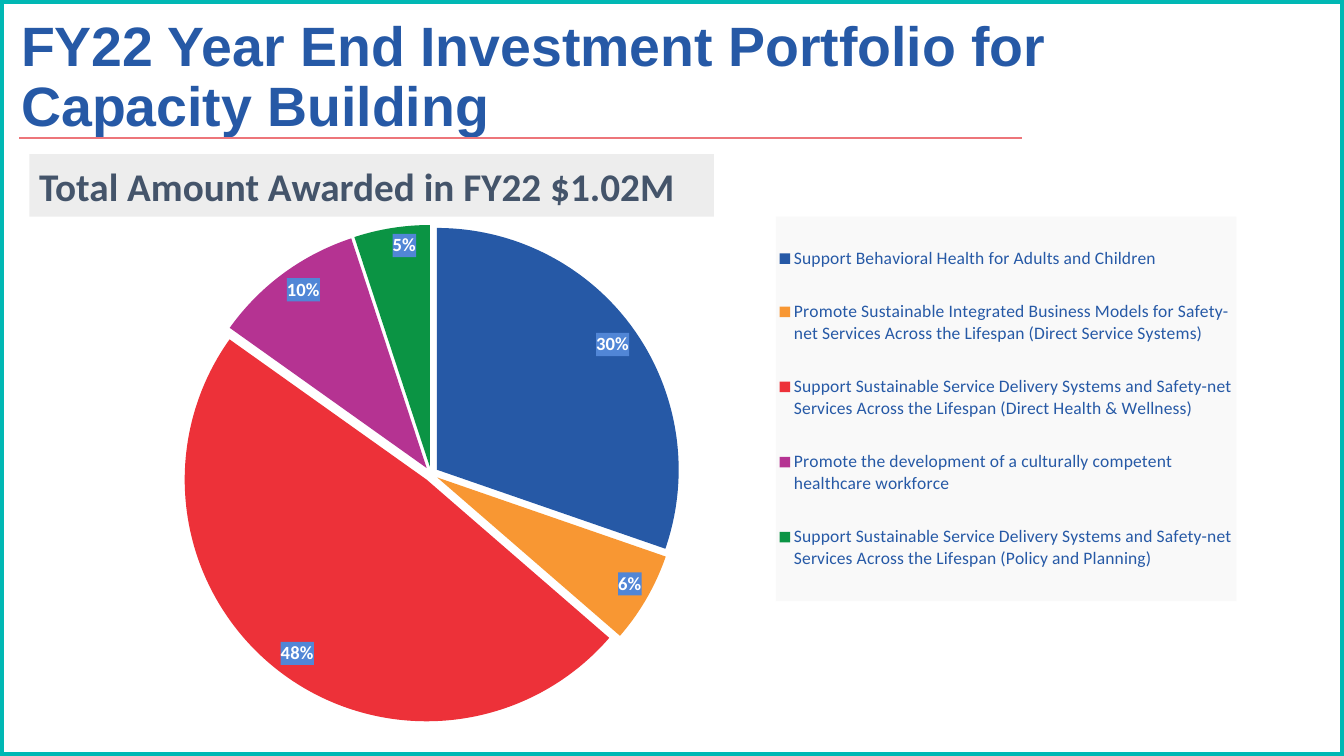
from lxml import etree
from pptx import Presentation
from pptx.chart.data import CategoryChartData
from pptx.dml.color import RGBColor
from pptx.enum.chart import XL_CHART_TYPE, XL_LABEL_POSITION, XL_LEGEND_POSITION
from pptx.enum.shapes import MSO_CONNECTOR, MSO_SHAPE
from pptx.enum.text import MSO_ANCHOR, MSO_AUTO_SIZE, PP_ALIGN
from pptx.oxml import parse_xml
from pptx.oxml.ns import nsdecls, qn
from pptx.util import Inches, Pt

COLORS = {
    "border": "00B8B4",
    "rule": "ED757A",
    "blue": "2659A6",
    "orange": "F89733",
    "red": "ED3139",
    "purple": "B53392",
    "green": "0B9444",
    "banner": "EDEDED",
    "slate": "44546A",
    "legend": "F9F9F9",
    "label": "5186D6",
    "white": "FFFFFF",
}

AWARDS = [
    ("Support Behavioral Health for Adults and Children", 30, "blue"),
    ("Promote Sustainable Integrated Business Models for Safety-net Services "
     "Across the Lifespan (Direct Service Systems)", 6, "orange"),
    ("Support Sustainable Service Delivery Systems and Safety-net Services "
     "Across the Lifespan (Direct Health & Wellness)", 48, "red"),
    ("Promote the development of a culturally competent healthcare workforce",
     10, "purple"),
    ("Support Sustainable Service Delivery Systems and Safety-net Services "
     "Across the Lifespan (Policy and Planning)", 5, "green"),
]


def color(name):
    """Return the named colour."""
    return RGBColor.from_string(COLORS[name])


def style_font(font, name, size, color_name, bold=False):
    """Set typeface, size, colour and weight."""
    font.name = name
    font.size = Pt(size)
    font.bold = bold
    font.color.rgb = color(color_name)


def set_title(page, text):
    """Place and format the title placeholder."""
    title = page.shapes.title
    title.left, title.top = Inches(0.11), Inches(0.35)
    title.width, title.height = Inches(11.5), Inches(0.86)
    frame = title.text_frame
    frame.text = text
    frame.word_wrap = True
    frame.auto_size = MSO_AUTO_SIZE.NONE
    frame.vertical_anchor = MSO_ANCHOR.MIDDLE
    para = frame.paragraphs[0]
    para.alignment = PP_ALIGN.LEFT
    para.line_spacing = 0.9
    style_font(para.runs[0].font, "Arial", 39.6, "blue", True)


def add_border(page, width, height):
    """Frame the whole slide."""
    border = page.shapes.add_shape(MSO_SHAPE.RECTANGLE, 0, 0, width, height)
    border.shadow.inherit = False
    border.fill.background()
    border.line.color.rgb = color("border")
    border.line.width = Pt(5.75)


def add_rule(page):
    """Draw the line under the title."""
    rule = page.shapes.add_connector(
        MSO_CONNECTOR.STRAIGHT, Inches(0.19), Inches(1.37), Inches(10.14), Inches(1.37))
    rule.line.color.rgb = color("rule")
    rule.line.width = Pt(1.5)
    etree.SubElement(rule._element.spPr, qn("a:effectLst"))


def add_banner(page, text):
    """Add the shaded total above the chart."""
    banner = page.shapes.add_shape(
        MSO_SHAPE.RECTANGLE, Inches(0.29), Inches(1.53), Inches(6.79), Inches(0.62))
    banner.shadow.inherit = False
    banner.fill.solid()
    banner.fill.fore_color.rgb = color("banner")
    banner.line.fill.background()
    frame = banner.text_frame
    frame.text = text
    frame.word_wrap = True
    frame.vertical_anchor = MSO_ANCHOR.MIDDLE
    para = frame.paragraphs[0]
    para.alignment = PP_ALIGN.LEFT
    style_font(para.runs[0].font, "Calibri", 28, "slate", True)


def chart_layout(left, top, width, height, inner=False):
    """Build a manual layout from fractions of the chart."""
    target = '<c:layoutTarget val="inner"/>' if inner else ""
    return parse_xml(
        f'<c:layout {nsdecls("c")}><c:manualLayout>{target}'
        '<c:xMode val="edge"/><c:yMode val="edge"/>'
        f'<c:x val="{left}"/><c:y val="{top}"/><c:w val="{width}"/><c:h val="{height}"/>'
        '</c:manualLayout></c:layout>')


def chart_fill(name):
    """Build a solid background for a chart part."""
    return parse_xml(
        f'<c:spPr {nsdecls("c", "a")}><a:solidFill>'
        f'<a:srgbClr val="{COLORS[name]}"/></a:solidFill></c:spPr>')


def remove_layout(element):
    """Drop an automatic layout."""
    for layout in element.findall(qn("c:layout")):
        element.remove(layout)


def format_legend(chart):
    """Place the legend at the right of the pie."""
    chart.has_legend = True
    legend = chart.legend
    legend.position = XL_LEGEND_POSITION.CORNER
    legend.include_in_layout = True
    style_font(legend.font, "Calibri", 12.5, "blue")
    element = legend._element
    remove_layout(element)
    overlay = element.find(qn("c:overlay"))
    overlay.addprevious(chart_layout(0.616, 0, 0.38, 0.745))
    overlay.addnext(chart_fill("legend"))


def format_labels(plot):
    """Show percentages inside the slices."""
    plot.has_data_labels = True
    labels = plot.data_labels
    labels.show_value = False
    labels.show_percentage = True
    labels.number_format = "0%"
    labels.number_format_is_linked = False
    labels.position = XL_LABEL_POSITION.INSIDE_END
    style_font(labels.font, "Calibri", 13.3, "white", True)
    labels._element.find(qn("c:txPr")).addprevious(chart_fill("label"))


def add_pie(page):
    """Add the pie of awards with its legend."""
    data = CategoryChartData()
    data.categories = [name for name, _, _ in AWARDS]
    data.add_series("Series 1", [share for _, share, _ in AWARDS])
    chart = page.shapes.add_chart(
        XL_CHART_TYPE.PIE, Inches(0.29), Inches(2.15), Inches(12.02), Inches(5.12), data).chart
    chart.has_title = False
    style_font(chart.font, "Calibri", 10, "blue")
    plot = chart.plots[0]
    plot.vary_by_categories = True
    series = plot.series[0]
    series._element.find(qn("c:tx")).addnext(
        parse_xml(f'<c:explosion {nsdecls("c")} val="3"/>'))
    for index, (_, _, name) in enumerate(AWARDS):
        fill = series.points[index].format.fill
        fill.solid()
        fill.fore_color.rgb = color(name)
    format_labels(plot)
    format_legend(chart)
    area = plot._element.getparent()
    remove_layout(area)
    area.insert(0, chart_layout(0.126, 0.011, 0.411, 0.975, inner=True))


def main():
    """Build and save the slide."""
    deck = Presentation()
    deck.slide_width, deck.slide_height = Inches(13.33), Inches(7.5)
    page = deck.slides.add_slide(deck.slide_layouts[5])
    add_border(page, deck.slide_width, deck.slide_height)
    add_rule(page)
    set_title(page, "FY22 Year End Investment Portfolio for Capacity Building")
    add_banner(page, "Total Amount Awarded in FY22 $1.02M")
    add_pie(page)
    deck.save("out.pptx")


if __name__ == "__main__":
    main()
